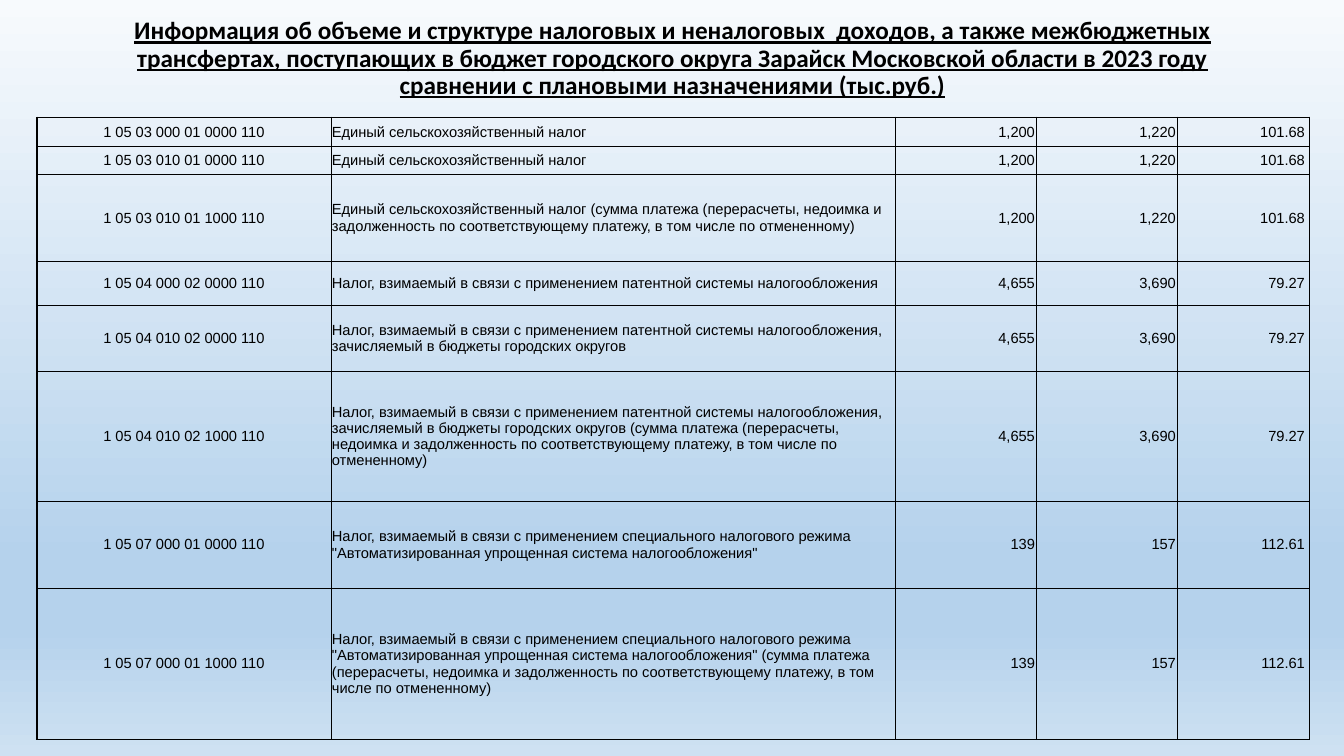
import dataclasses

import pptx
import pptx.dml.color
import pptx.enum.text
import pptx.oxml
import pptx.oxml.ns
import pptx.util

ALIGN = pptx.enum.text.PP_ALIGN
MIDDLE = pptx.enum.text.MSO_ANCHOR.MIDDLE
QN = pptx.oxml.ns.qn
NS = pptx.oxml.ns.nsdecls("a")


@dataclasses.dataclass(frozen=True)
class Theme:
    ink: str = "000000"
    sky: tuple = ((0, "F7FAFD"), (74, "B5D2EC"), (83, "B5D2EC"), (100, "CEE1F2"))
    head_font: str = "Calibri"
    body_font: str = "Arial"
    head_size: float = 18
    body_size: float = 10.5
    thin: float = 0.5
    thick: float = 1


def px(n):
    """Turn px into EMU: the slide is 1344 px wide."""
    return pptx.util.Emu(round(n * 12192000 / 1344))


class Page:
    def __init__(self, deck, theme):
        self.theme = theme
        self.slide = deck.slides.add_slide(deck.slide_layouts[6])

    def paint(self):
        """Fill the background with a vertical gradient."""
        fill = self.slide.background.fill
        fill.gradient()
        fill.gradient_angle = 270
        stops = next(self.slide.element.iter(QN("a:gsLst")))
        for old in list(stops):
            stops.remove(old)
        for place, tone in self.theme.sky:
            stops.append(pptx.oxml.parse_xml(
                f'<a:gs {NS} pos="{place * 1000}"><a:srgbClr val="{tone}"/></a:gs>'))

    def text(self, frame, words, align, font, size, bold=False):
        """Put one run into the first paragraph of a frame."""
        para = frame.paragraphs[0]
        para.alignment = align
        run = para.add_run()
        run.text = words
        run.font.name = font
        run.font.size = pptx.util.Pt(size)
        run.font.bold = bold
        run.font.underline = bold
        run.font.color.rgb = pptx.dml.color.RGBColor.from_string(self.theme.ink)
        return para

    def title(self, words, left, top, width, height, foot):
        """Add the heading; foot is the inset below its text."""
        box = self.slide.shapes.add_textbox(px(left), px(top), px(width), px(height))
        frame = box.text_frame
        frame.word_wrap = True
        frame.vertical_anchor = MIDDLE
        frame.margin_bottom = px(foot)
        look = self.theme
        para = self.text(frame, words, ALIGN.CENTER, look.head_font, look.head_size, True)
        para.line_spacing = 0.9

    def border(self, cell, sides):
        """Draw the sides of a cell, given as tag and width in points."""
        props = cell._tc.get_or_add_tcPr()
        for spot, (tag, width) in enumerate(sides.items()):
            props.insert(spot, pptx.oxml.parse_xml(
                f'<a:{tag} {NS} w="{pptx.util.Pt(width)}"><a:solidFill>'
                f'<a:srgbClr val="{self.theme.ink}"/></a:solidFill></a:{tag}>'))

    def table(self, rows, left, top, widths, heights, aligns, ends):
        """Add the grid; ends holds the right inset of each column."""
        grid = self.slide.shapes.add_table(
            len(rows), len(widths), px(left), px(top),
            px(sum(widths)), px(sum(heights))).table
        grid.first_row = grid.horz_banding = False
        for col, width in zip(grid.columns, widths):
            col.width = px(width)
        look = self.theme
        last = len(widths) - 1
        for r, row in enumerate(rows):
            grid.rows[r].height = px(heights[r])
            for c, words in enumerate(row):
                cell = grid.cell(r, c)
                cell.vertical_anchor = MIDDLE
                cell.margin_left = cell.margin_top = px(1)
                cell.margin_right = px(ends[c])
                cell.margin_bottom = 0
                cell.fill.background()
                self.text(cell.text_frame, words, aligns[c], look.body_font, look.body_size)
                self.border(cell, {
                    "lnL": look.thick if c == 0 else look.thin,
                    "lnR": look.thick if c == last else look.thin,
                    "lnT": look.thin, "lnB": look.thin})


# Wording shared by the rows
FARM = "Единый сельскохозяйственный налог"
PATENT = "Налог, взимаемый в связи с применением патентной системы налогообложения"
TOWN = PATENT + ", зачисляемый в бюджеты городских округов"
AUTO = ("Налог, взимаемый в связи с применением специального налогового режима "
        '"Автоматизированная упрощенная система налогообложения"')
SUM = (" (сумма платежа (перерасчеты, недоимка и задолженность по "
       "соответствующему платежу, в том числе по отмененному)")

# Plan, fact and percentage of each tax
FARM_SUMS = ("1,200", "1,220", "101.68")
PATENT_SUMS = ("4,655", "3,690", "79.27")
AUTO_SUMS = ("139", "157", "112.61")

ROWS = [
    ("1 05 03 000 01 0000 110", FARM, *FARM_SUMS),
    ("1 05 03 010 01 0000 110", FARM, *FARM_SUMS),
    ("1 05 03 010 01 1000 110", FARM + SUM, *FARM_SUMS),
    ("1 05 04 000 02 0000 110", PATENT, *PATENT_SUMS),
    ("1 05 04 010 02 0000 110", TOWN, *PATENT_SUMS),
    ("1 05 04 010 02 1000 110", TOWN + SUM, *PATENT_SUMS),
    ("1 05 07 000 01 0000 110", AUTO, *AUTO_SUMS),
    ("1 05 07 000 01 1000 110", AUTO + SUM, *AUTO_SUMS),
]


def main():
    deck = pptx.Presentation()
    deck.slide_width, deck.slide_height = px(1344), px(756)
    page = Page(deck, Theme())
    page.paint()

    # Heading
    page.title(
        "Информация об объеме и структуре налоговых и неналоговых  доходов, а также "
        "межбюджетных трансфертах, поступающих в бюджет городского округа Зарайск "
        "Московской области в 2023 году сравнении с плановыми назначениями (тыс.руб.)",
        93, 0, 1159, 146, foot=33)

    # Tax income table
    page.table(
        ROWS, 37, 117,
        widths=(294, 564, 141, 141, 133),
        heights=(29, 28, 87, 44, 66, 130, 87, 151),
        aligns=(ALIGN.CENTER, ALIGN.LEFT, ALIGN.RIGHT, ALIGN.RIGHT, ALIGN.RIGHT),
        ends=(1, 1, 1, 1, 5))

    deck.save("out.pptx")


if __name__ == "__main__":
    main()
